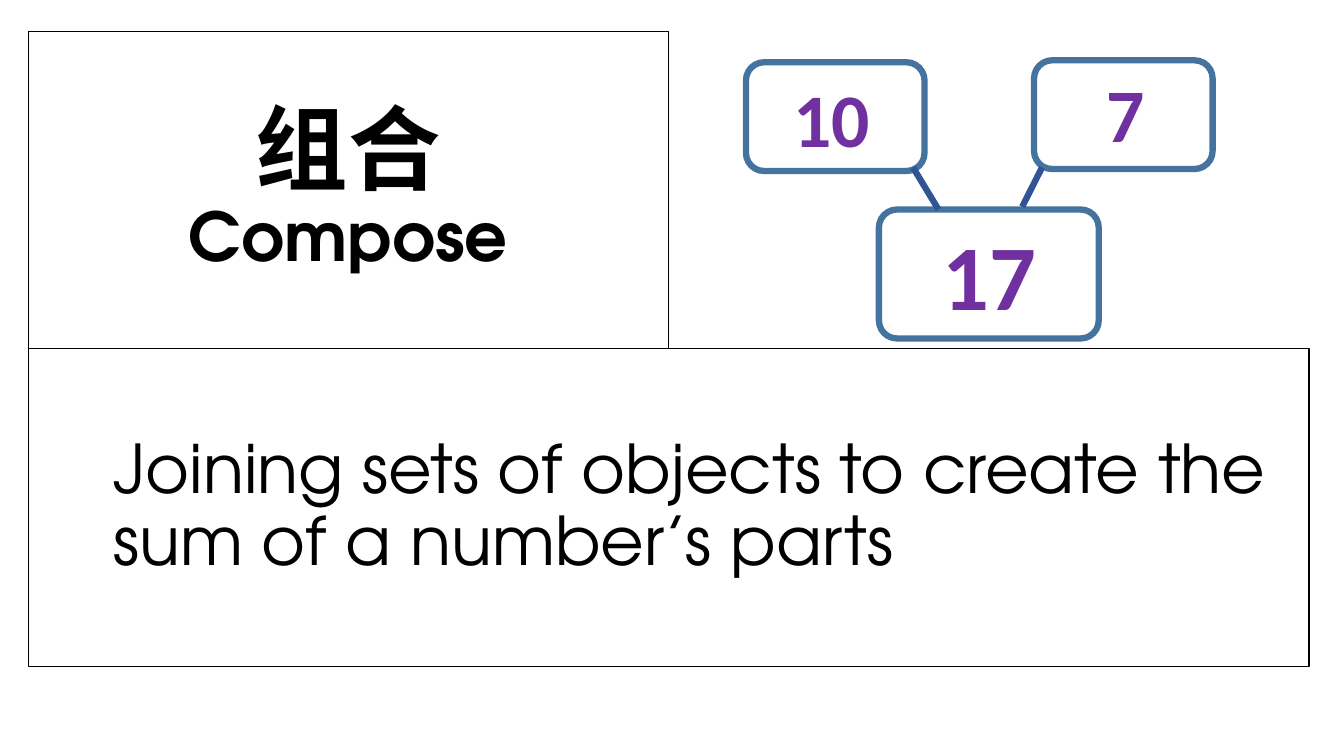
from lxml import etree
from pptx import Presentation
from pptx.dml.color import RGBColor
from pptx.enum.shapes import MSO_CONNECTOR, MSO_SHAPE
from pptx.enum.text import MSO_ANCHOR, PP_ALIGN
from pptx.oxml.ns import qn
from pptx.util import Cm, Pt

COLORS = {"ink": "000000", "box": "43739E", "link": "2F5597", "number": "7030A0"}
HEADING = "TeX Gyre Adventor"


def rgb(name):
    """Return the named colour."""
    return RGBColor.from_string(COLORS[name])


def add_text(p, text, font=HEADING, size=48, color="ink", bold=False):
    """Append a formatted run to a paragraph."""
    r = p.add_run()
    r.text = text
    r.font.name, r.font.size, r.font.bold = font, Pt(size), bold
    r.font.color.rgb = rgb(color)


def add_box(s, kind, x, y, w, h, color, width):
    """Add an unfilled outlined shape."""
    sp = s.shapes.add_shape(kind, Cm(x), Cm(y), Cm(w), Cm(h))
    sp.shadow.inherit = False
    sp.fill.background()
    sp.line.color.rgb = rgb(color)
    sp.line.width = Pt(width)
    return sp


def add_panel(s, x, y, w, h, align):
    """Add a framed text panel and return its first paragraph."""
    tf = add_box(s, MSO_SHAPE.RECTANGLE, x, y, w, h, "ink", 0.75).text_frame
    tf.word_wrap = True
    tf.vertical_anchor = MSO_ANCHOR.MIDDLE
    p = tf.paragraphs[0]
    p.alignment = align
    p.line_spacing = 0.9
    return p


def add_term(s, x, y, w, h):
    """Add the vocabulary term in both languages."""
    p = add_panel(s, x, y, w, h, PP_ALIGN.CENTER)
    add_text(p, "组合", font="Roboto", size=66, bold=True)
    p.add_line_break()
    add_text(p, "Compose", bold=True)


def add_definition(s, x, y, w, h):
    """Add the indented definition."""
    p = add_panel(s, x, y, w, h, PP_ALIGN.LEFT)
    pPr = p._p.get_or_add_pPr()
    pPr.set("marL", str(Cm(1.9)))
    pPr.set("indent", "0")
    add_text(p, "Joining sets of objects to create the sum of a number’s parts")


def add_link(s, x1, y1, x2, y2):
    """Add a line joining a part to the total."""
    c = s.shapes.add_connector(MSO_CONNECTOR.STRAIGHT, Cm(x1), Cm(y1), Cm(x2), Cm(y2))
    c.line.color.rgb = rgb("link")
    c.line.width = Pt(4.5)
    etree.SubElement(c._element.spPr, qn("a:effectLst"))


def add_number(s, text, x, y, w, h, dx, dy, size):
    """Add a number label offset within its rounded box."""
    sp = s.shapes.add_textbox(Cm(x + dx), Cm(y + dy), Cm(w - dx), Cm(h - dy))
    sp.text_frame.word_wrap = True
    add_text(sp.text_frame.paragraphs[0], text, font="Calibri", size=size,
             color="number", bold=True)


def add_number_bond(s, x, y):
    """Add two parts linked to their total."""
    bonds = [("10", 1.96, 0.78, 4.5, 2.74, 0.94, 0.11, 54, 0.167),
             ("7", 9.22, 0.73, 4.5, 2.74, 1.58, 0.05, 54, 0.167),
             ("17", 5.31, 4.49, 5.54, 3.25, 1.35, 0.08, 66, 0.14)]
    for _, bx, by, w, h, _, _, _, radius in bonds:
        sp = add_box(s, MSO_SHAPE.ROUNDED_RECTANGLE, x + bx, y + by, w, h, "box", 4.5)
        sp.adjustments[0] = radius
    for x1, x2, y2 in [(6.17, 6.81, 4.49), (9.42, 8.92, 4.42)]:
        add_link(s, x + x1, y + 3.43, x + x2, y + y2)
    for text, bx, by, w, h, dx, dy, size, _ in bonds:
        add_number(s, text, x + bx, y + by, w, h, dx, dy, size)


def main():
    """Build and save the vocabulary card."""
    prs = Presentation()
    prs.slide_width, prs.slide_height = Cm(33.87), Cm(19.05)
    s = prs.slides.add_slide(prs.slide_layouts[6])
    left, top, term_w, row_h = 0.71, 0.79, 16.13, 8
    add_term(s, left, top, term_w, row_h)
    add_definition(s, left, top + row_h, 32.28, row_h)
    add_number_bond(s, left + term_w, top)
    prs.save("out.pptx")


if __name__ == "__main__":
    main()
